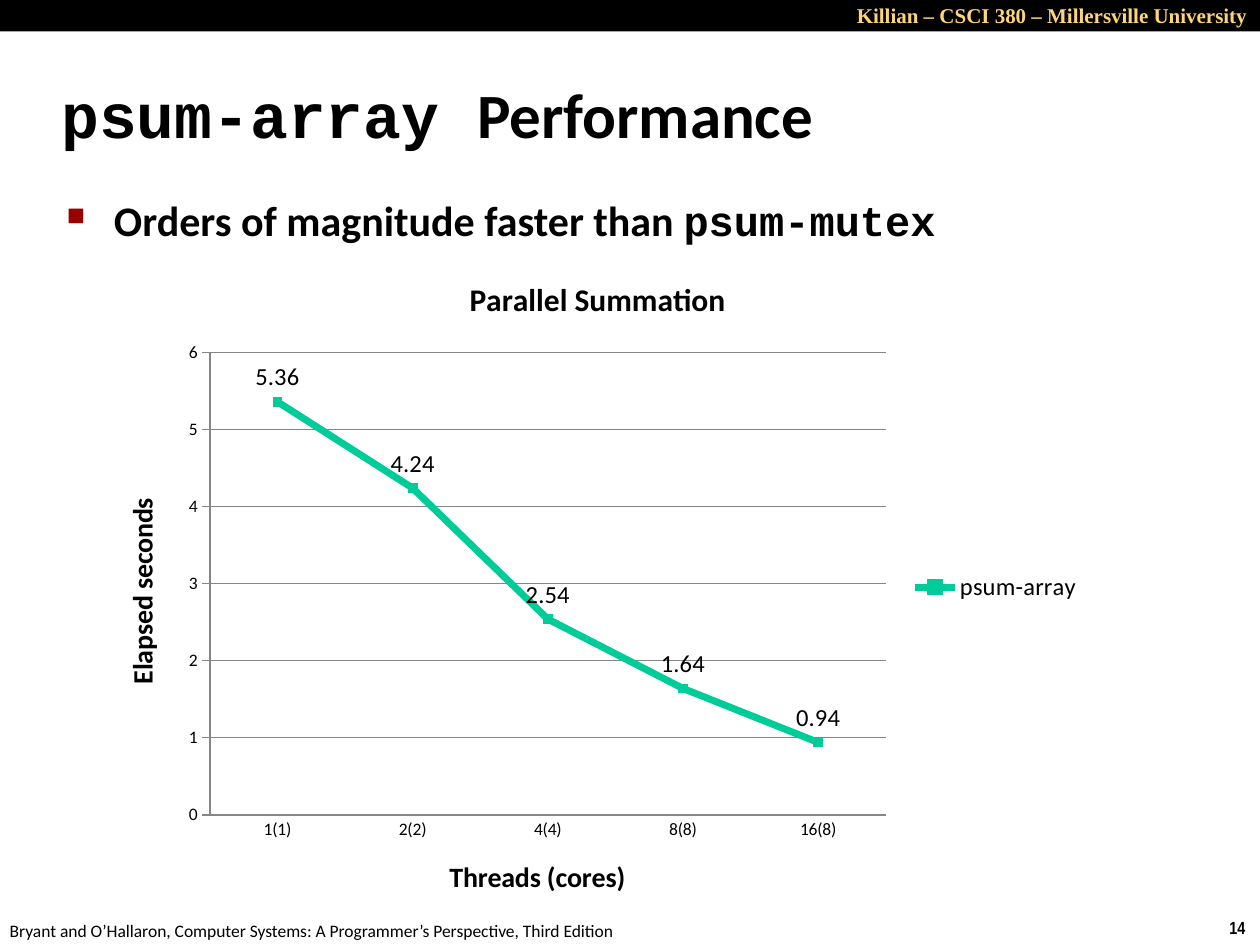
"""Builds a slide with a line chart of the psum-array timings."""
from lxml import etree
from pptx import Presentation
from pptx import util as u
from pptx.chart.data import CategoryChartData
from pptx.dml.color import RGBColor
from pptx.enum import chart as ch, shapes, text
from pptx.oxml import ns

BLACK = RGBColor(0, 0, 0)
GOLD = RGBColor(0xFF, 0xD5, 0x79)
RED = RGBColor(0x99, 0, 0)
GREEN = RGBColor(0, 0xCC, 0x99)
GRAY = RGBColor(0x86, 0x86, 0x86)


def sub(parent, tag, **attrs):
    return etree.SubElement(parent, ns.qn(tag), attrs)


class Deck:
    def __init__(self, font="Calibri", color=BLACK):
        self.font, self.color = font, color
        self.prs = Presentation()
        self.prs.slide_width, self.prs.slide_height = u.Pt(720), u.Pt(540)
        self.s = self.prs.slides.add_slide(self.prs.slide_layouts[6])

    def style(self, font, color=None, **fmt):
        for name, value in {"name": self.font, **fmt}.items():
            setattr(font, name, value)
        font.color.rgb = color or self.color

    def bar(self, *box, color):
        sp = self.s.shapes.add_shape(shapes.MSO_SHAPE.RECTANGLE, *map(u.Pt, box))
        sp.shadow.inherit = False
        sp.fill.solid()
        sp.fill.fore_color.rgb = color
        sp.line.fill.background()

    def text(self, *box, runs, wrap=True, anchor=text.MSO_ANCHOR.TOP, align=None, **fmt):
        tf = self.s.shapes.add_textbox(*map(u.Pt, box)).text_frame
        tf.word_wrap, tf.vertical_anchor = wrap, anchor
        p = tf.paragraphs[0]
        p.alignment = align
        for words, name in runs:
            r = p.add_run()
            r.text = words
            self.style(r.font, **{"name": name, **fmt})
        return p

    def bullet(self, p, char, color, percent, indent):
        pPr = p._p.get_or_add_pPr()
        pPr.set("marL", str(u.Pt(indent)))
        pPr.set("indent", str(-u.Pt(indent)))
        sub(sub(pPr, "a:spcBef"), "a:spcPct", val="20000")
        sub(sub(pPr, "a:buClr"), "a:srgbClr", val=str(color))
        sub(pPr, "a:buSzPct", val=str(percent * 1000))
        sub(pPr, "a:buChar", char=char)

    def title(self, owner, words, size):
        tf = (owner.chart_title if hasattr(owner, "chart_title") else owner.axis_title).text_frame
        tf.text = words
        self.style(tf.paragraphs[0].runs[0].font, size=u.Pt(size), bold=True)

    def axis(self, axis, words, tick):
        self.title(axis, words, 16)
        axis.major_tick_mark, axis.minor_tick_mark = tick, ch.XL_TICK_MARK.NONE
        axis.format.line.color.rgb = GRAY

    def line_chart(self, *box, title, cats, name, vals, x_title, y_title, plot, color):
        data = CategoryChartData()
        data.categories = cats
        data.add_series(name, vals)
        kind = ch.XL_CHART_TYPE.LINE_MARKERS
        c = self.s.shapes.add_chart(kind, *map(u.Pt, box), data).chart
        self.style(c.font, size=u.Pt(10))
        self.title(c, title, 18)
        self.axis(c.category_axis, x_title, ch.XL_TICK_MARK.NONE)
        self.axis(c.value_axis, y_title, ch.XL_TICK_MARK.OUTSIDE)
        for key, value in {"minimum_scale": 0, "maximum_scale": 6, "major_unit": 1}.items():
            setattr(c.value_axis, key, value)
        c.value_axis.major_gridlines.format.line.color.rgb = GRAY
        c.has_legend = True
        c.legend.position, c.legend.include_in_layout = ch.XL_LEGEND_POSITION.RIGHT, False
        self.style(c.legend.font, size=u.Pt(14))
        self.series(c.plots[0], color)
        self.layout(c, plot)

    def series(self, plot, color):
        plot.vary_by_categories = False
        ser = plot.series[0]
        ser.smooth = False
        ser.format.line.color.rgb, ser.format.line.width = color, u.Pt(4)
        ser.marker.style, ser.marker.size = ch.XL_MARKER_STYLE.SQUARE, 5
        ser.marker.format.fill.solid()
        ser.marker.format.fill.fore_color.rgb = color
        ser.marker.format.line.color.rgb = color
        labels = ser.data_labels
        labels.show_value, labels.position = True, ch.XL_LABEL_POSITION.ABOVE
        self.style(labels.font, size=u.Pt(14))

    def layout(self, c, plot):
        area = c._chartSpace.chart.plotArea
        for old in area.findall(ns.qn("c:layout")):
            area.remove(old)
        node = etree.Element(ns.qn("c:layout"))
        area.insert(0, node)
        manual = sub(node, "c:manualLayout")
        rules = {"layoutTarget": "inner", "xMode": "edge", "yMode": "edge"}
        for tag, val in {**rules, **dict(zip("xywh", plot))}.items():
            sub(manual, f"c:{tag}", val=str(val))


def main():
    d = Deck()
    d.text(695.5, 520.5, 24.5, 19.5, runs=[("14", "Arial Narrow")], wrap=False,
           size=u.Pt(10), bold=True)
    d.text(-1.5, 522, 366, 19.5, wrap=False, size=u.Pt(10), runs=[
        ("Bryant and O’Hallaron, Computer Systems: A Programmer’s Perspective, Third Edition",
         "Calibri")])
    d.bar(0, 0, 720, 18, color=BLACK)
    d.text(324, -2, 396, 21.5, align=text.PP_ALIGN.RIGHT, size=u.Pt(12), bold=True, color=GOLD,
           runs=[("Killian – CSCI 380 – Millersville University", "Times New Roman")])
    d.text(28, 34.5, 598, 60, anchor=text.MSO_ANCHOR.MIDDLE, size=u.Pt(36), bold=True,
           runs=[("psum-array ", "Courier New"), ("Performance", "Calibri")])
    p = d.text(31, 107.5, 622, 60.5, size=u.Pt(24), bold=True,
               runs=[("Orders of magnitude faster than ", "Calibri"),
                     ("psum-mutex", "Courier New")])
    d.bullet(p, "■", RED, 60, 27)
    d.line_chart(57.5, 144, 568, 383, title="Parallel Summation", name="psum-array",
                 cats=["1(1)", "2(2)", "4(4)", "8(8)", "16(8)"],
                 vals=[5.36, 4.24, 2.54, 1.64, 0.94], color=GREEN,
                 x_title="Threads (cores)", y_title="Elapsed seconds",
                 plot=(0.11, 0.15, 0.68, 0.69))
    d.prs.save("out.pptx")


if __name__ == "__main__":
    main()
